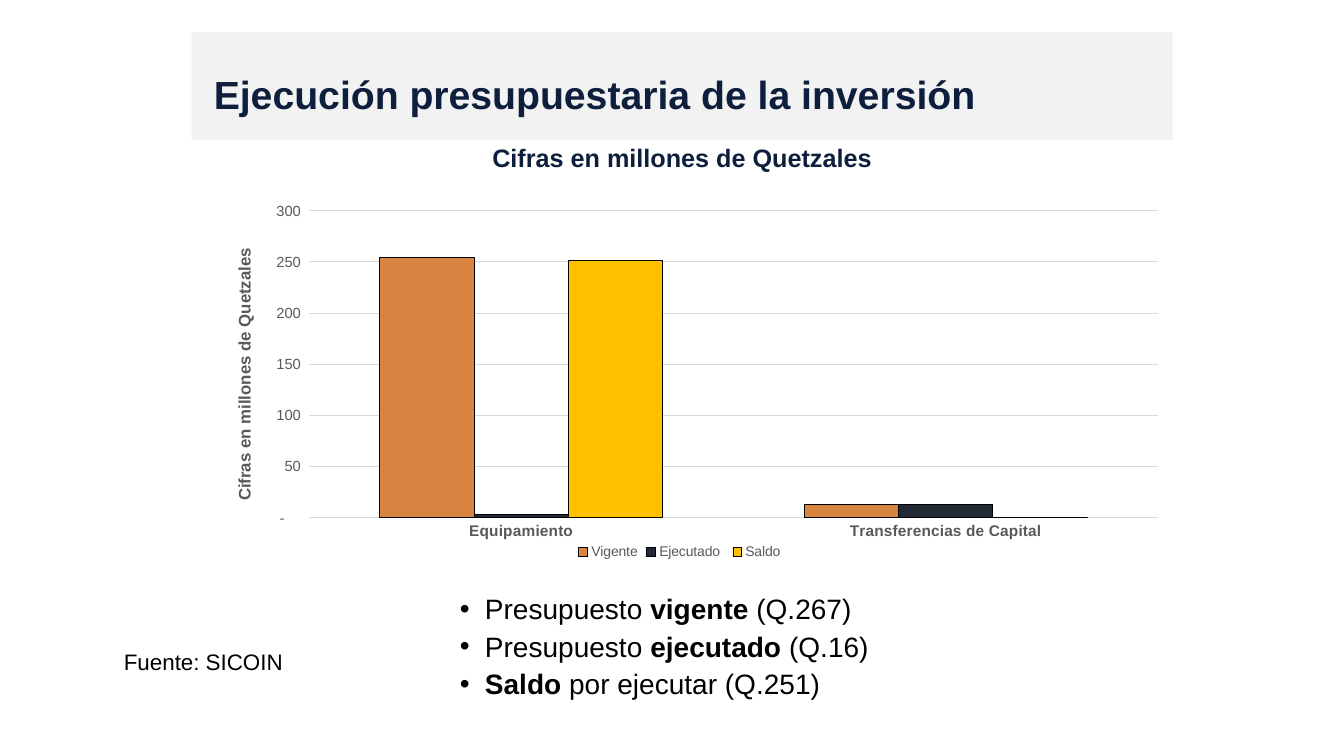
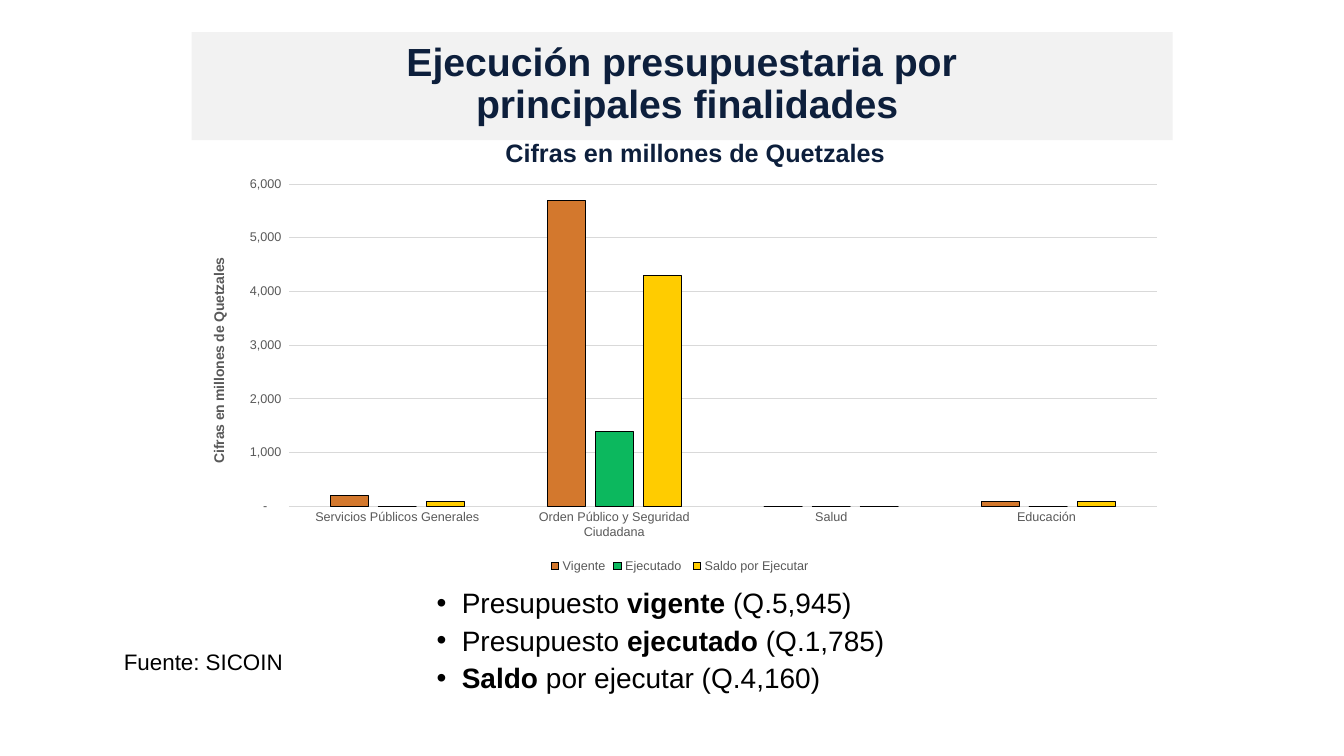
from dataclasses import dataclass
from typing import Any, NamedTuple

from pptx import Presentation
from pptx.chart.chart import Chart
from pptx.chart.data import CategoryChartData
from pptx.dml.color import RGBColor
from pptx.enum.chart import XL_CHART_TYPE as ChartType
from pptx.enum.chart import XL_LEGEND_POSITION as LegendPosition
from pptx.enum.chart import XL_TICK_MARK as TickMark
from pptx.enum.shapes import MSO_SHAPE as ShapeKind
from pptx.enum.text import MSO_ANCHOR as Anchor
from pptx.enum.text import MSO_AUTO_SIZE as AutoSize
from pptx.enum.text import PP_ALIGN as Align
from pptx.oxml import parse_xml
from pptx.oxml.ns import nsdecls, qn
from pptx.slide import Slide, SlideLayout
from pptx.util import Emu, Pt

EMU_PER_PX = 9144
FONT_NAME = "Arial"
NAVY = RGBColor(0x0D, 0x1F, 0x3C)
BAND_GREY = RGBColor(0xF2, 0xF2, 0xF2)
GRID_GREY = RGBColor(0xD9, 0xD9, 0xD9)
LABEL_GREY = RGBColor(0x59, 0x59, 0x59)
BLACK = RGBColor(0x00, 0x00, 0x00)
COPPER = RGBColor(0xD7, 0x85, 0x41)
SLATE = RGBColor(0x22, 0x2A, 0x35)
AMBER = RGBColor(0xFF, 0xC0, 0x00)
ORANGE = RGBColor(0xD3, 0x78, 0x2D)
GREEN = RGBColor(0x0C, 0xB8, 0x5E)
YELLOW = RGBColor(0xFF, 0xCC, 0x00)

UNIT = "Cifras en millones de Quetzales"
SOURCE = "Fuente: SICOIN"
AMOUNT_FORMAT = '_-* #,##0_-;\\-* #,##0_-;_-* "-"??_-;_-@_'
TITLE_STYLE = {"size": Pt(28), "bold": True, "color": NAVY}
UNIT_STYLE = {"size": Pt(18), "bold": True, "color": NAVY}
SOURCE_STYLE = {"size": Pt(16), "color": BLACK}
BULLET_STYLE = {"size": Pt(20), "color": BLACK}


class Box(NamedTuple):
    left: int
    top: int
    width: int
    height: int

    def emu(self) -> list[Emu]:
        return [Emu(value * EMU_PER_PX) for value in self]


class Series(NamedTuple):
    name: str
    values: tuple[int, ...]
    color: RGBColor


class Bullet(NamedTuple):
    before: str
    strong: str
    after: str


@dataclass(frozen=True)
class BudgetChart:
    box: Box
    categories: tuple[str, ...]
    series: tuple[Series, ...]
    maximum: int
    step: int
    gap: int
    overlap: int
    category_style: dict[str, Any]
    value_size: float
    axis_title_size: int
    legend_size: int
    plot_area: dict[str, float]
    axis_title_place: dict[str, float]
    legend_place: dict[str, float]
    category_line: bool


@dataclass(frozen=True)
class BudgetSlide:
    title_lines: tuple[str, ...]
    title_box: Box
    title_align: Align
    unit_box: Box
    bullets_box: Box
    bullets: tuple[Bullet, ...]
    chart: BudgetChart


BAND_BOX = Box(190, 32, 973, 107)
SOURCE_BOX = Box(113, 638, 225, 37)

SLIDES = (
    BudgetSlide(
        title_lines=("Ejecución presupuestaria de la inversión",),
        title_box=Box(202, 49, 964, 94),
        title_align=Align.LEFT,
        unit_box=Box(177, 144, 999, 28),
        bullets_box=Box(396, 586, 635, 126),
        bullets=(
            Bullet("Presupuesto ", "vigente", " (Q.267)"),
            Bullet("Presupuesto ", "ejecutado", " (Q.16)"),
            Bullet("", "Saldo", " por ejecutar (Q.251)"),
        ),
        chart=BudgetChart(
            box=Box(206, 141, 957, 434),
            categories=("Equipamiento", "Transferencias de Capital"),
            series=(
                Series("Vigente", (254, 13), COPPER),
                Series("Ejecutado ", (3, 13), SLATE),
                Series("Saldo", (251, 0), AMBER),
            ),
            maximum=300, step=50, gap=150, overlap=0,
            category_style={"size": Pt(11), "bold": True},
            value_size=10.5, axis_title_size=12, legend_size=10,
            plot_area={"x": 0.105, "y": 0.157, "w": 0.88, "h": 0.702},
            axis_title_place={"x": 0.024, "y": 0.235},
            legend_place={"x": 0.38, "y": 0.91},
            category_line=False,
        ),
    ),
    BudgetSlide(
        title_lines=("Ejecución presupuestaria por ", "principales finalidades"),
        title_box=Box(203, 50, 957, 68),
        title_align=Align.CENTER,
        unit_box=Box(190, 139, 999, 28),
        bullets_box=Box(373, 580, 660, 153),
        bullets=(
            Bullet("Presupuesto ", "vigente", " (Q.5,945)"),
            Bullet("Presupuesto ", "ejecutado", " (Q.1,785)"),
            Bullet("", "Saldo", " por ejecutar (Q.4,160)"),
        ),
        chart=BudgetChart(
            box=Box(183, 168, 985, 406),
            categories=(
                "Servicios Públicos Generales",
                "Orden Público y Seguridad Ciudadana",
                "Salud",
                "Educación ",
            ),
            series=(
                Series("Vigente", (200, 5700, 0, 100), ORANGE),
                Series("Ejecutado ", (0, 1400, 0, 0), GREEN),
                Series("Saldo por Ejecutar", (100, 4300, 0, 100), YELLOW),
            ),
            maximum=6000, step=1000, gap=219, overlap=-27,
            category_style={"size": Pt(9), "bold": False},
            value_size=9, axis_title_size=10, legend_size=9,
            plot_area={"x": 0.105, "y": 0.036, "w": 0.874, "h": 0.788},
            axis_title_place={"x": 0.023, "y": 0.21},
            legend_place={"x": 0.365, "y": 0.945},
            category_line=True,
        ),
    ),
)


def set_attributes(target: Any, values: dict[str, Any]) -> None:
    for name, value in values.items():
        setattr(target, name, value)


def format_font(font: Any, style: dict[str, Any]) -> None:
    values = {"name": FONT_NAME, **style}
    font.color.rgb = values.pop("color", LABEL_GREY)
    set_attributes(font, values)


def place(shape: Any, box: Box) -> None:
    set_attributes(shape, dict(zip(("left", "top", "width", "height"), box.emu())))


def add_run(paragraph: Any, text: str, style: dict[str, Any]) -> None:
    run = paragraph.add_run()
    run.text = text
    format_font(run.font, style)


def add_label(slide: Slide, box: Box, text: str, style: dict[str, Any],
              paragraph_format: dict[str, Any], anchor: Anchor) -> None:
    frame = slide.shapes.add_textbox(*box.emu()).text_frame
    set_attributes(frame, {"word_wrap": True, "vertical_anchor": anchor})
    paragraph = frame.paragraphs[0]
    set_attributes(paragraph, paragraph_format)
    add_run(paragraph, text, style)


def fill_title(slide: Slide, content: BudgetSlide) -> None:
    title = slide.shapes.title
    place(title, content.title_box)
    set_attributes(title.text_frame, {
        "word_wrap": True, "auto_size": AutoSize.NONE, "vertical_anchor": Anchor.MIDDLE,
    })
    paragraph = title.text_frame.paragraphs[0]
    set_attributes(paragraph, {"alignment": content.title_align, "line_spacing": 0.9})
    for index, line in enumerate(content.title_lines):
        if index:
            paragraph.add_line_break()
        add_run(paragraph, line, TITLE_STYLE)


def fill_bullets(slide: Slide, content: BudgetSlide) -> None:
    body = slide.placeholders[1]
    place(body, content.bullets_box)
    frame = body.text_frame
    set_attributes(frame, {"word_wrap": True, "auto_size": AutoSize.NONE})
    for index, bullet in enumerate(content.bullets):
        paragraph = frame.add_paragraph() if index else frame.paragraphs[0]
        properties = paragraph._p.get_or_add_pPr()
        properties.set("marL", "685800")
        properties.set("indent", "-228600")
        properties.append(parse_xml(
            f'<a:buClr {nsdecls("a")}><a:srgbClr val="{BLACK}"/></a:buClr>'))
        properties.append(parse_xml(f'<a:buChar {nsdecls("a")} char="•"/>'))
        set_attributes(paragraph, {
            "level": 1, "line_spacing": 0.9, "space_before": Pt(5 if index else 0),
        })
        for text, bold in zip(bullet, (False, True, False)):
            if text:
                add_run(paragraph, text, {**BULLET_STYLE, "bold": bold})


def set_layout(parent: Any, index: int, position: dict[str, float]) -> None:
    for old_layout in parent.findall(qn("c:layout")):
        parent.remove(old_layout)
    target = '<c:layoutTarget val="inner"/>' if "w" in position else ""
    modes = "".join(f'<c:{key}Mode val="edge"/>' for key in ("x", "y"))
    values = "".join(f'<c:{key} val="{value}"/>' for key, value in position.items())
    parent.insert(index, parse_xml(
        f'<c:layout {nsdecls("c")}><c:manualLayout>{target}{modes}{values}'
        "</c:manualLayout></c:layout>"))


def format_axes(chart: Chart, content: BudgetChart) -> None:
    category_axis, value_axis = chart.category_axis, chart.value_axis
    for axis in (category_axis, value_axis):
        set_attributes(axis, {"major_tick_mark": TickMark.NONE, "minor_tick_mark": TickMark.NONE})
        axis.format.line.fill.background()
    if content.category_line:
        category_axis.format.line.color.rgb = GRID_GREY
        category_axis.format.line.width = Pt(0.75)
    format_font(category_axis.tick_labels.font, content.category_style)
    format_font(value_axis.tick_labels.font, {"size": Pt(content.value_size)})
    set_attributes(value_axis, {
        "minimum_scale": 0, "maximum_scale": content.maximum,
        "major_unit": content.step, "has_major_gridlines": True,
    })
    set_attributes(value_axis.tick_labels, {
        "number_format": AMOUNT_FORMAT, "number_format_is_linked": False,
    })
    grid_line = value_axis.major_gridlines.format.line
    grid_line.color.rgb = GRID_GREY
    grid_line.width = Pt(0.75)
    axis_title = value_axis.axis_title
    add_run(axis_title.text_frame.paragraphs[0], UNIT,
            {"size": Pt(content.axis_title_size), "bold": True})
    body_properties = next(axis_title.element.iter(qn("a:bodyPr")))
    body_properties.set("rot", "-5400000")
    body_properties.set("vert", "horz")
    set_layout(axis_title.element, 1, content.axis_title_place)


def add_budget_chart(slide: Slide, content: BudgetChart) -> None:
    data = CategoryChartData()
    data.categories = content.categories
    for series in content.series:
        data.add_series(series.name, series.values)
    chart = slide.shapes.add_chart(
        ChartType.COLUMN_CLUSTERED, *content.box.emu(), data).chart
    set_attributes(chart, {"has_title": False, "has_legend": True})
    format_font(chart.font, {"size": Pt(10), "color": BLACK})
    plot = chart.plots[0]
    set_attributes(plot, {
        "gap_width": content.gap, "overlap": content.overlap, "vary_by_categories": False,
    })
    for drawn, series in zip(plot.series, content.series):
        drawn.format.fill.solid()
        drawn.format.fill.fore_color.rgb = series.color
        drawn.format.line.color.rgb = BLACK
        drawn.format.line.width = Pt(0.75)
    format_axes(chart, content)
    legend = chart.legend
    set_attributes(legend, {"position": LegendPosition.BOTTOM, "include_in_layout": False})
    format_font(legend.font, {"size": Pt(content.legend_size)})
    set_layout(next(chart.element.iter(qn("c:legend"))), 1, content.legend_place)
    set_layout(next(chart.element.iter(qn("c:plotArea"))), 0, content.plot_area)


def add_band(slide: Slide, layout: SlideLayout) -> None:
    band = slide.shapes.add_shape(ShapeKind.RECTANGLE, *BAND_BOX.emu())
    band.shadow.inherit = False
    band.fill.solid()
    band.fill.fore_color.rgb = BAND_GREY
    band.line.fill.background()
    next(band.element.iter(qn("p:cNvPr"))).set("id", "20")
    layout.shapes.element.insert(2, band.element)


def main() -> None:
    presentation = Presentation()
    presentation.slide_width, presentation.slide_height = Box(0, 0, 1333, 750).emu()[2:]
    layout = presentation.slide_layouts[1]
    for index, content in enumerate(SLIDES):
        slide = presentation.slides.add_slide(layout)
        if index == 0:
            add_band(slide, layout)
        fill_title(slide, content)
        fill_bullets(slide, content)
        add_budget_chart(slide, content.chart)
        add_label(slide, SOURCE_BOX, SOURCE, SOURCE_STYLE, {}, Anchor.TOP)
        add_label(slide, content.unit_box, UNIT, UNIT_STYLE,
                  {"alignment": Align.CENTER, "line_spacing": 0.9}, Anchor.MIDDLE)
    presentation.save("out.pptx")


if __name__ == "__main__":
    main()
